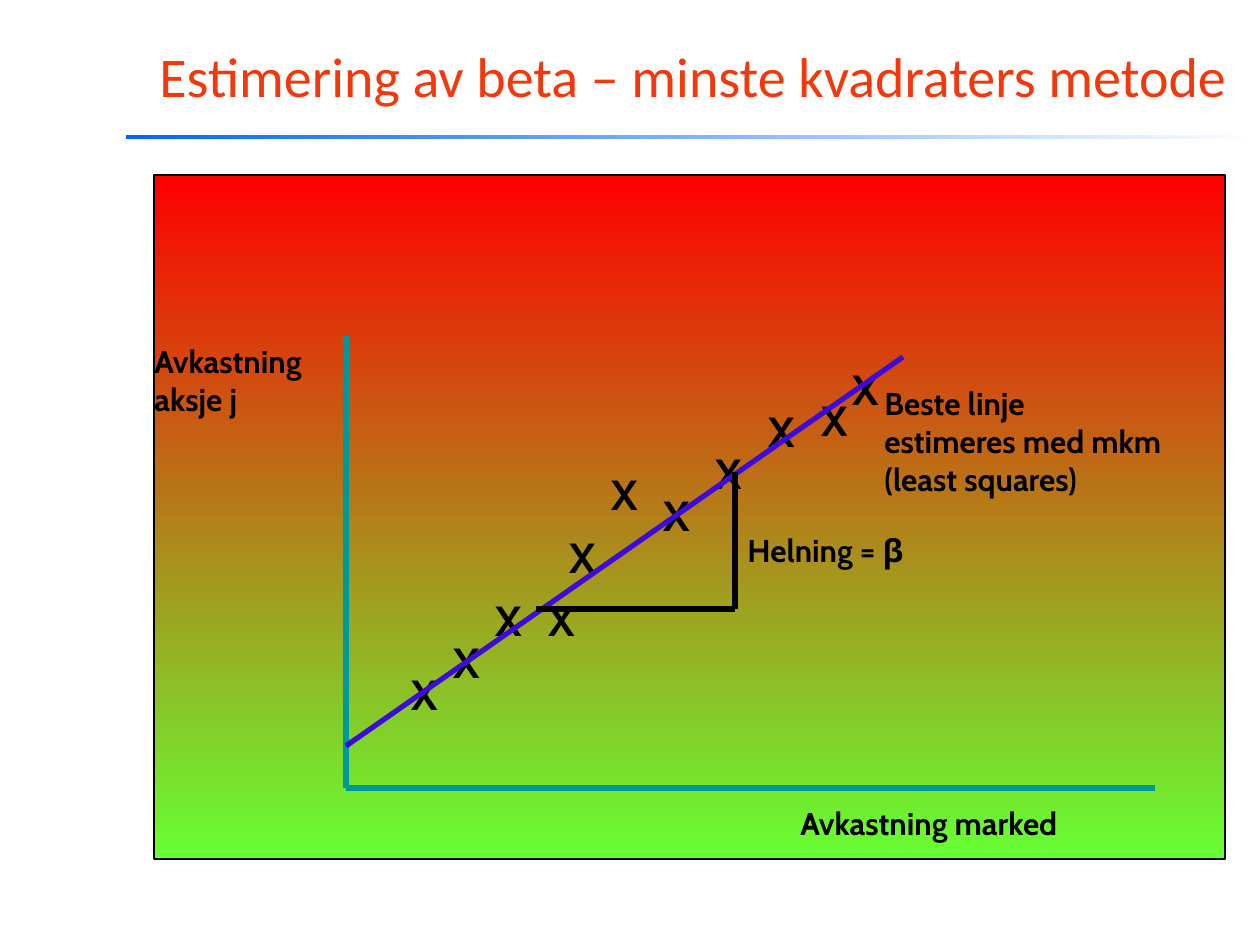
from pptx import Presentation
from pptx.dml.color import RGBColor
from pptx.enum.shapes import MSO_CONNECTOR as Connector, MSO_SHAPE as Shape
from pptx.enum.text import MSO_ANCHOR as Anchor, MSO_AUTO_SIZE as AutoSize
from pptx.oxml.ns import qn
from pptx.util import Emu, Pt
from lxml.etree import SubElement

PX_PER_INCH = 126
BLACK = RGBColor(0x00, 0x00, 0x00)
WHITE = RGBColor(0xFF, 0xFF, 0xFF)
ORANGE = RGBColor(0xF4, 0x38, 0x0C)
BLUE = RGBColor(0x00, 0x66, 0xFF)
RED = RGBColor(0xFF, 0x00, 0x00)
GREEN = RGBColor(0x66, 0xFF, 0x33)
TEAL = RGBColor(0x00, 0x99, 0x99)
VIOLET = RGBColor(0x3D, 0x0D, 0xD7)

MARKER_WIDTH, MARKER_HEIGHT = 54, 63
OBSERVATIONS = [
    (399, 662), (441, 630), (557, 525), (536, 588), (599, 462), (483, 588),
    (651, 483), (756, 399), (703, 441), (809, 388), (840, 357),
]
ORIGIN = (346, 788)
SLOPE_CORNER = (735, 609)


def px(*lengths):
    return [Emu(round(length * 914400 / PX_PER_INCH)) for length in lengths]


class SlideBuilder:
    title_font = "Calibri"
    label_font = "Cabin"
    line_width = Pt(3)

    def __init__(self, slide):
        self.slide = slide

    def gradient_box(self, box, start, end, angle, outline=None):
        """Angle is in degrees, counter-clockwise from left to right."""
        shape = self.slide.shapes.add_shape(Shape.RECTANGLE, *px(*box))
        shape.shadow.inherit = False
        shape.fill.gradient()
        shape.fill.gradient_angle = angle
        for stop, color in zip(shape.fill.gradient_stops, (start, end)):
            stop.color.rgb = color
        if outline is None:
            shape.line.fill.background()
        else:
            shape.line.color.rgb = outline
            shape.line.width = Pt(0.75)

    def line(self, start, end, color):
        connector = self.slide.shapes.add_connector(
            Connector.STRAIGHT, *px(*start, *end))
        connector.line.color.rgb = color
        connector.line.width = self.line_width
        SubElement(connector._element.spPr, qn("a:effectLst"))

    def text(self, box, text, size, font, color, bold=False, wrap=True):
        """Add one paragraph; a newline in the text is a line break."""
        shape = self.slide.shapes.add_textbox(*px(*box))
        frame = shape.text_frame
        frame.word_wrap = wrap
        paragraph = frame.paragraphs[0]
        paragraph.text = text
        for run in paragraph.runs:
            run.font.size = Pt(size)
            run.font.name = font
            run.font.bold = bold
            run.font.color.rgb = color
        return frame

    def title(self, box, text):
        frame = self.text(box, text, 32, self.title_font, ORANGE)
        frame.vertical_anchor = Anchor.MIDDLE

    def label(self, box, text, size=18, wrap=True):
        frame = self.text(box, text, size, self.label_font, BLACK, True, wrap)
        frame.auto_size = AutoSize.SHAPE_TO_FIT_TEXT

    def marker(self, left, top):
        self.label((left, top, MARKER_WIDTH, MARKER_HEIGHT), "X", 24, False)


def main():
    presentation = Presentation()
    presentation.slide_width, presentation.slide_height = px(1260, 945)
    slide = presentation.slides.add_slide(presentation.slide_layouts[6])
    builder = SlideBuilder(slide)

    builder.gradient_box((126, 135, 1134, 4), BLUE, WHITE, 0)
    builder.title((147, 16, 1113, 118),
                  "Estimering av beta – minste kvadraters metode")
    builder.gradient_box((154, 175, 1071, 684), RED, GREEN, 270, BLACK)

    builder.line((ORIGIN[0], 336), ORIGIN, TEAL)
    builder.line(ORIGIN, (1155, ORIGIN[1]), TEAL)
    builder.label((142, 336, 239, 88), "Avkastning\naksje j")
    builder.label((788, 798, 368, 50), "Avkastning marked")

    for left, top in OBSERVATIONS:
        builder.marker(left, top)

    builder.line((ORIGIN[0], 746), (903, 357), VIOLET)
    builder.label((872, 378, 346, 126),
                  "Beste linje \nestimeres med mkm\n(least squares)",
                  wrap=False)

    builder.line((536, SLOPE_CORNER[1]), SLOPE_CORNER, BLACK)
    builder.line(SLOPE_CORNER, (SLOPE_CORNER[0], 472), BLACK)
    builder.label((735, 525, 209, 50), "Helning = β", wrap=False)

    presentation.save("out.pptx")


if __name__ == "__main__":
    main()
